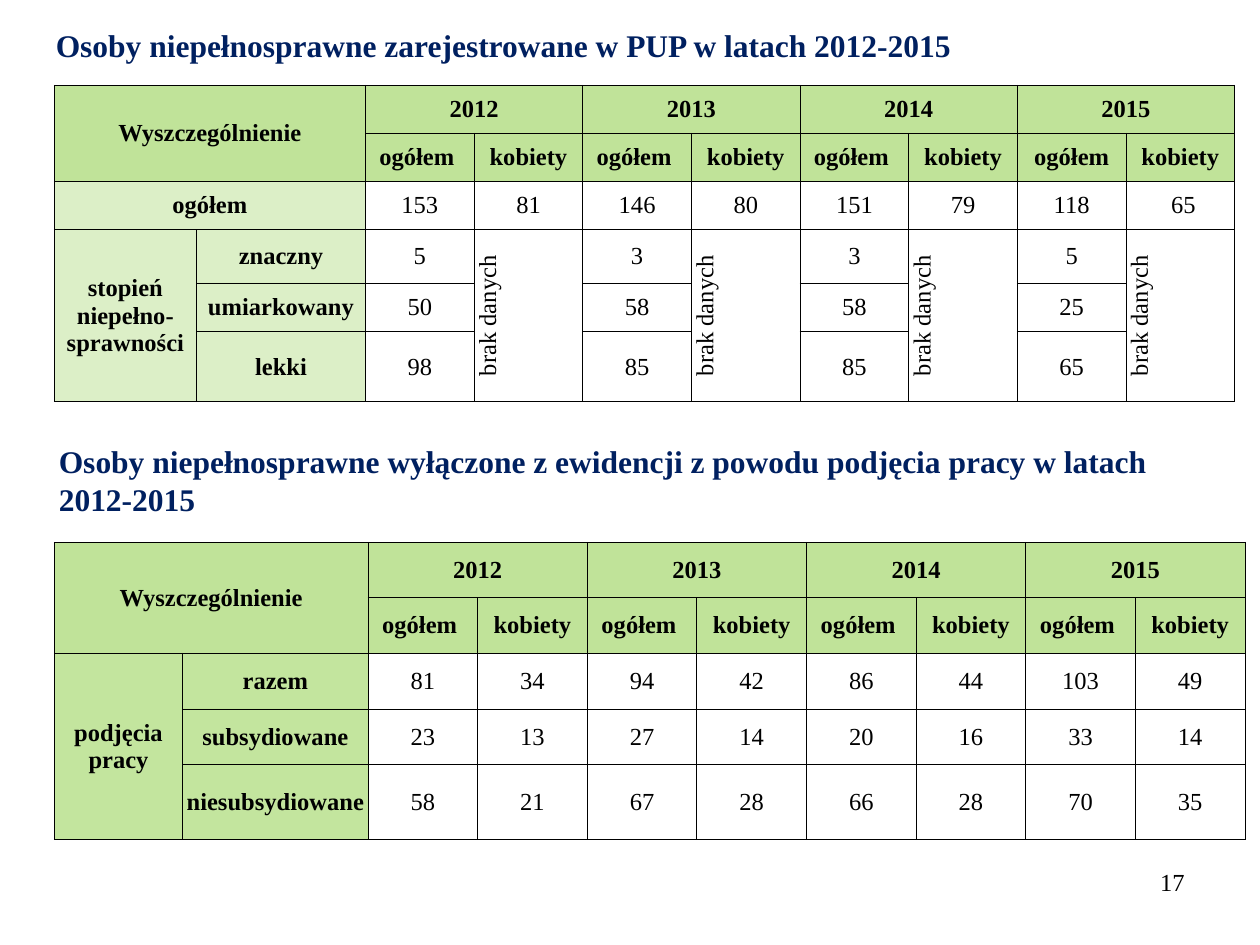
from lxml import etree
from pptx import Presentation
from pptx import util as u
from pptx.dml import color
from pptx.enum import text
from pptx.oxml import ns

FONT = "Times New Roman"
BLACK, NAVY, LIME, GREEN = "000000", "002060", "C0E399", "92D050"
YEARS = ["2012", "2013", "2014", "2015"]
NO_DATA = "brak danych"


def rgb(value):
    return color.RGBColor.from_string(value)


def apply_format(target, values):
    for name, value in values.items():
        setattr(target, name, value)


def write(frame, words, size, ink=BLACK, bold=False, align=text.PP_ALIGN.LEFT):
    frame.text = words
    paragraph = frame.paragraphs[0]
    paragraph.alignment = align
    for run in paragraph.runs:
        apply_format(run.font, {"name": FONT, "size": u.Pt(size), "bold": bold})
        run.font.color.rgb = rgb(ink)


def add_text(slide, box, words, size, **style):
    shape = slide.shapes.add_textbox(*map(u.Pt, box))
    shape.text_frame.word_wrap = True
    write(shape.text_frame, words, size, **style)
    return shape


def add_heading(slide, box, words):
    shape = add_text(slide, box, words, 18, ink=NAVY, bold=True)
    shape.text_frame.auto_size = text.MSO_AUTO_SIZE.SHAPE_TO_FIT_TEXT


def add_borders(cell):
    properties = cell._tc.get_or_add_tcPr()
    for index, side in enumerate(("lnL", "lnR", "lnT", "lnB")):
        line = etree.Element(ns.qn(f"a:{side}"), w=str(u.Pt(0.5)))
        fill = etree.SubElement(line, ns.qn("a:solidFill"))
        etree.SubElement(fill, ns.qn("a:srgbClr"), val=BLACK)
        properties.insert(index, line)


def paint(cell, fill, opacity=100):
    cell.fill.solid()
    cell.fill.fore_color.rgb = rgb(fill)
    if opacity < 100:
        for tint in cell._tc.tcPr.iter(ns.qn("a:srgbClr")):
            etree.SubElement(tint, ns.qn("a:alpha"), val=str(opacity * 1000))


def format_cell(cell, words, is_label):
    apply_format(cell, {
        "margin_left": 0, "margin_right": 0, "margin_top": 0, "margin_bottom": 0,
        "vertical_anchor": text.MSO_ANCHOR.MIDDLE,
    })
    write(cell.text_frame, words, 14, bold=is_label, align=text.PP_ALIGN.CENTER)
    if words == NO_DATA:
        cell._tc.tcPr.set("vert", "vert270")


def add_year_table(slide, box, label_widths, heights, subheads, body, label_fill, merges):
    years = [words for year in YEARS for words in (year, "")]
    rows = [["Wyszczególnienie", "", *years], ["", "", *subheads], *body]
    count = len(rows[0])
    frame = slide.shapes.add_table(len(rows), count, *map(u.Pt, box))
    table = frame.table
    apply_format(table, {"first_row": False, "horz_banding": False})

    value_width = (box[2] - sum(label_widths)) / (count - 2)
    for column, width in zip(table.columns, label_widths + [value_width] * (count - 2)):
        column.width = u.Pt(width)
    for row, height in zip(table.rows, heights):
        row.height = u.Pt(height)

    for r, row in enumerate(rows):
        for c, words in enumerate(row):
            cell = table.cell(r, c)
            format_cell(cell, words, r < 2 or c < 2)
            if r < 2:
                paint(cell, LIME)
            elif c < 2:
                paint(cell, label_fill, 55)
            else:
                cell.fill.background()
            add_borders(cell)

    header_merges = [(0, 0, 1, 1)] + [(0, c, 0, c + 1) for c in range(2, count, 2)]
    for top, left, bottom, right in header_merges + merges:
        table.cell(top, left).merge(table.cell(bottom, right))


def add_registered_table(slide, box):
    body = [
        ["ogółem", "", "153", "81", "146", "80", "151", "79", "118", " 65"],
        ["stopień niepełno-\vsprawności", "znaczny",
         "5", NO_DATA, "3", NO_DATA, "3", NO_DATA, "5", NO_DATA],
        ["", "umiarkowany", "50", "", "58", "", "58", "", "25", ""],
        ["", "lekki", "98", "", "85", "", "85", "", "65", ""],
    ]
    subheads = ["ogółem ", "kobiety"] * 3 + ["ogółem", "kobiety"]
    merges = [(2, 0, 2, 1)] + [(3, c, 5, c) for c in (0, 3, 5, 7, 9)]
    add_year_table(slide, box, [81.3, 96.6], [27.5, 27.5, 27.5, 30.5, 28, 40],
                   subheads, body, LIME, merges)


def add_employed_table(slide, box):
    body = [
        ["podjęcia pracy", "razem", "81", "34", "94", "42", "86", "44", "103", "49"],
        ["", "subsydiowane", "23", "13", "27", "14", "20", "16", "33", "14"],
        ["", "niesubsydiowane", "58", "21", "67", "28", "66", "28", "70", "35"],
    ]
    add_year_table(slide, box, [73.5, 105.8], [31.8] * 4 + [43],
                   ["ogółem ", "kobiety"] * 4, body, GREEN, [(2, 0, 4, 0)])


def main():
    presentation = Presentation()
    apply_format(presentation, {"slide_width": u.Pt(720), "slide_height": u.Pt(540)})
    slide = presentation.slides.add_slide(presentation.slide_layouts[6])
    add_text(slide, (516, 492, 168, 37.5), "17", 14, align=text.PP_ALIGN.RIGHT)
    add_heading(slide, (26.5, 249, 658, 51),
                "Osoby niepełnosprawne wyłączone z ewidencji z powodu podjęcia pracy "
                "w latach 2012-2015")
    add_heading(slide, (24.8, 11.5, 689, 29),
                "Osoby niepełnosprawne zarejestrowane w PUP w latach 2012-2015")
    add_registered_table(slide, (31, 48.7, 674.7, 181))
    add_employed_table(slide, (31, 309.8, 680.5, 170.2))
    presentation.save("out.pptx")


if __name__ == "__main__":
    main()
